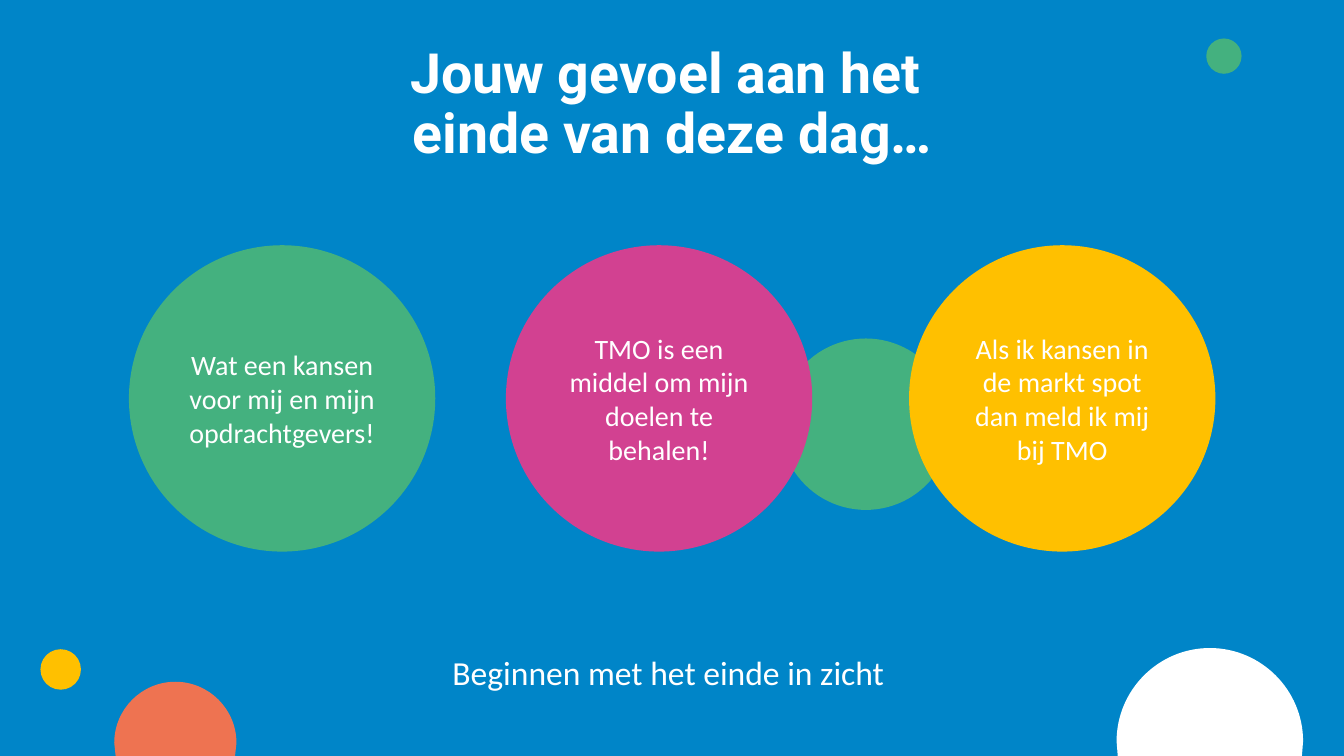
import lxml.etree
import pptx
import pptx.dml.color
import pptx.enum.shapes
import pptx.enum.text
import pptx.oxml.ns
import pptx.util
from pptx.util import Cm

COLORS = {
    "blue": "0085C8",
    "green": "44B17F",
    "pink": "D24191",
    "yellow": "FFC000",
    "orange": "EE7351",
    "white": "FFFFFF",
}
SLIDE_WIDTH, SLIDE_HEIGHT = 33.87, 19.05


def paint(shape, color):
    shape.shadow.inherit = False
    shape.fill.solid()
    shape.fill.fore_color.rgb = pptx.dml.color.RGBColor.from_string(COLORS[color])
    shape.line.fill.background()


def write(shape, text, anchor, size, font_name="Calibri", bold=False, line_spacing=1.0):
    frame = shape.text_frame
    frame.word_wrap = True
    frame.vertical_anchor = anchor
    paragraph = frame.paragraphs[0]
    paragraph.text = text
    paragraph.alignment = pptx.enum.text.PP_ALIGN.CENTER
    paragraph.line_spacing = line_spacing
    font_format = {"name": font_name, "size": pptx.util.Pt(size), "bold": bold}
    for attribute, value in font_format.items():
        setattr(paragraph.font, attribute, value)
    paragraph.font.color.rgb = pptx.dml.color.RGBColor.from_string(COLORS["white"])


presentation = pptx.Presentation()
presentation.slide_width = Cm(SLIDE_WIDTH)
presentation.slide_height = Cm(SLIDE_HEIGHT)
slide = presentation.slides.add_slide(presentation.slide_layouts[6])
slide.background.fill.solid()
slide.background.fill.fore_color.rgb = pptx.dml.color.RGBColor.from_string(COLORS["blue"])

# Circles cut off by the bottom edge: left, top, radius, color
ARC_HANDLE = 0.55
for left, top, radius, color in [
    (28.14, 16.33, 2.35, "white"),
    (2.88, 17.18, 1.54, "orange"),
]:
    center_x, center_y, right = left + radius, top + radius, left + 2 * radius
    inset = radius - (radius ** 2 - (SLIDE_HEIGHT - center_y) ** 2) ** 0.5
    builder = slide.shapes.build_freeform(Cm(left + inset), Cm(SLIDE_HEIGHT))
    builder.add_line_segments([
        (Cm(left), Cm(center_y)),
        (Cm(center_x), Cm(top)),
        (Cm(right), Cm(center_y)),
        (Cm(right - inset), Cm(SLIDE_HEIGHT)),
    ])
    cut_circle = builder.convert_to_shape()
    paint(cut_circle, color)

    # Round the two upper quarters with Bézier curves
    lines = list(cut_circle.element.iter(pptx.oxml.ns.qn("a:lnTo")))
    handle = radius * ARC_HANDLE
    for line, controls in [
        (lines[1], [(0, radius - handle), (radius - handle, 0)]),
        (lines[2], [(radius + handle, 0), (2 * radius, radius - handle)]),
    ]:
        curve = lxml.etree.Element(pptx.oxml.ns.qn("a:cubicBezTo"))
        for x, y in controls:
            lxml.etree.SubElement(
                curve, pptx.oxml.ns.qn("a:pt"), x=str(int(Cm(x))), y=str(int(Cm(y))))
        curve.append(line[0])
        line.getparent().replace(line, curve)

# Decorative dots: left, top, diameter, color
for left, top, diameter, color in [
    (1.02, 16.36, 1.02, "yellow"),
    (30.4, 0.97, 0.89, "green"),
    (19.66, 8.53, 4.32, "green"),
]:
    dot = slide.shapes.add_shape(
        pptx.enum.shapes.MSO_SHAPE.OVAL, Cm(left), Cm(top), Cm(diameter), Cm(diameter))
    paint(dot, color)

# Title
title = slide.shapes.add_textbox(Cm(3.56), Cm(1.02), Cm(26.77), Cm(1.75))
write(title, "Jouw gevoel aan het \veinde van deze dag…", pptx.enum.text.MSO_ANCHOR.TOP,
      39.6, "Roboto", True, 0.9)

# Statement circles
STATEMENT_TOP, STATEMENT_DIAMETER = 6.18, 7.72
for left, color, text in [
    (3.25, "green", "Wat een kansen voor mij en mijn opdrachtgevers!"),
    (12.75, "pink", "TMO is een middel om mijn doelen te behalen!"),
    (22.91, "yellow", "Als ik kansen in de markt spot dan meld ik mij bij TMO"),
]:
    statement = slide.shapes.add_shape(
        pptx.enum.shapes.MSO_SHAPE.OVAL, Cm(left), Cm(STATEMENT_TOP),
        Cm(STATEMENT_DIAMETER), Cm(STATEMENT_DIAMETER))
    paint(statement, color)
    write(statement, text, pptx.enum.text.MSO_ANCHOR.MIDDLE, 20)

# Closing line
closing = slide.shapes.add_textbox(Cm(8.1), Cm(16.31), Cm(17.68), Cm(1.17))
write(closing, "Beginnen met het einde in zicht ", pptx.enum.text.MSO_ANCHOR.TOP, 24)

presentation.save("out.pptx")
